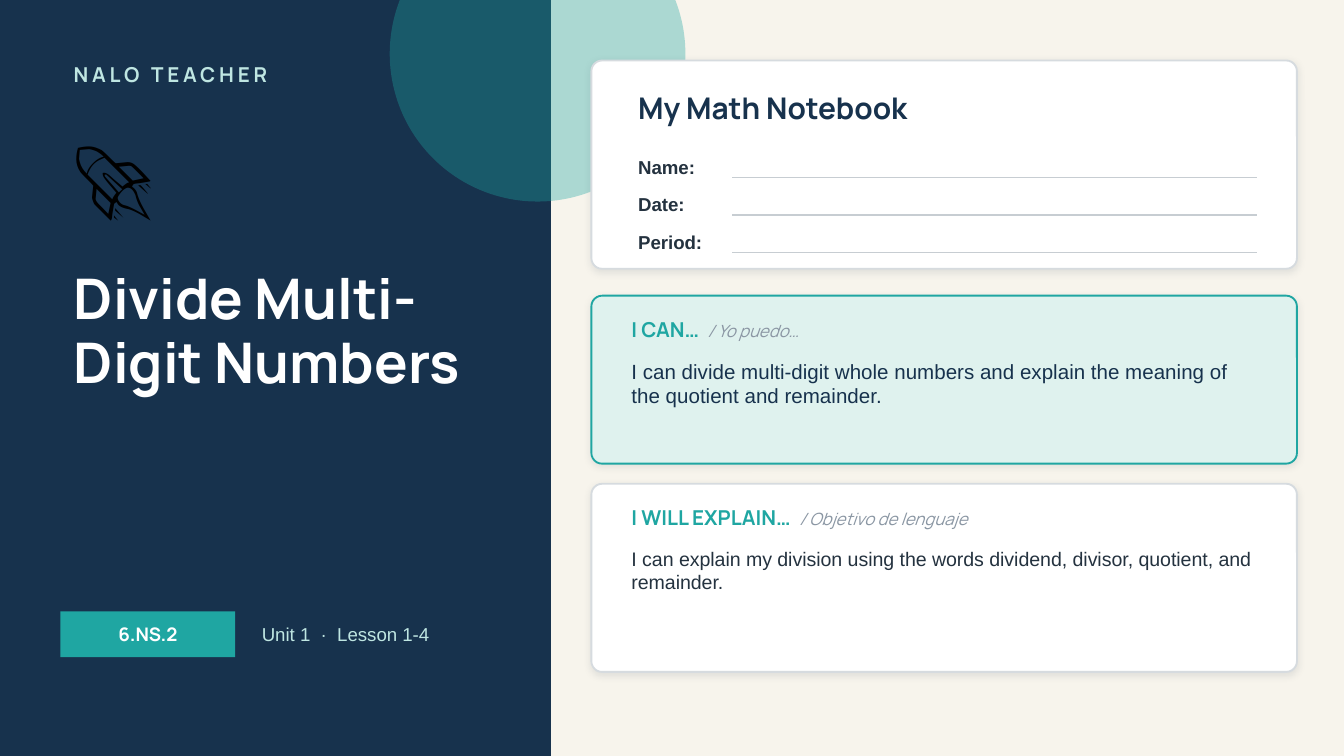
from lxml import etree
from pptx import Presentation
from pptx.dml.color import RGBColor
from pptx.enum.shapes import MSO_CONNECTOR, MSO_SHAPE
from pptx.enum.text import MSO_ANCHOR, MSO_AUTO_SIZE, PP_ALIGN
from pptx.oxml.ns import qn
from pptx.util import Inches, Pt

RECTANGLE, OVAL, ROUNDED = MSO_SHAPE.RECTANGLE, MSO_SHAPE.OVAL, MSO_SHAPE.ROUNDED_RECTANGLE
TOP, MIDDLE = MSO_ANCHOR.TOP, MSO_ANCHOR.MIDDLE
LEFT, CENTER = PP_ALIGN.LEFT, PP_ALIGN.CENTER

NAVY, TEAL, MINT = "17324D", "1FA6A2", "BFE6E2"
CREAM, WHITE, INK = "F7F4EC", "FFFFFF", "24323F"
GREY, BORDER, RULE = "8A96A3", "D6DBDF", "C7CDD2"
PALE_TEAL, SHADOW, BLACK = "DFF2EE", "1C2E42", "000000"
HEADING, BODY, SYMBOL = "Manrope", "Arial", "Calibri"

PAGE_WIDTH = 10
PAGE_HEIGHT = PAGE_WIDTH * 9 / 16
CARD_LEFT, CARD_WIDTH = 4.4, 5.25
CORNER = 0.08


def rgb(color):
    return RGBColor.from_string(color)


def style(size, color, name=BODY, **extra):
    return {"size": Pt(size), "color": color, "name": name, **extra}


def place(shape, left, top, width, height):
    shape.left, shape.top = Inches(left), Inches(top)
    shape.width, shape.height = Inches(width), Inches(height)


def write(shape, spans, anchor=MIDDLE, align=LEFT, line_spacing=None):
    """Fill a shape with one paragraph of (text, format) spans."""
    frame = shape.text_frame
    frame.word_wrap = True
    frame.auto_size = MSO_AUTO_SIZE.NONE
    frame.vertical_anchor = anchor
    para = frame.paragraphs[0]
    para.alignment = align
    para.line_spacing = line_spacing
    for text, formats in spans:
        span = para.add_run()
        span.text = text
        for key, value in formats.items():
            if key == "color":
                span.font.color.rgb = rgb(value)
            elif key in ("spc", "kern"):
                span.font._element.set(key, str(value * 100))
            else:
                setattr(span.font, key, value)


def add_text(page, bounds, spans, anchor=MIDDLE):
    box = page.shapes.add_textbox(*map(Inches, bounds))
    write(box, spans, anchor)


def add_block(page, kind, bounds, fill, opacity=None):
    block = page.shapes.add_shape(kind, *map(Inches, bounds))
    block.shadow.inherit = False
    block.fill.solid()
    block.fill.fore_color.rgb = rgb(fill)
    block.line.fill.background()
    if opacity:
        color = block._element.spPr.find(qn("a:solidFill"))[0]
        etree.SubElement(color, qn("a:alpha"), val=str(opacity * 1000))
    return block


def add_card(page, top, height, fill, border):
    """Add a rounded panel with a thin border and a soft shadow below it."""
    card = add_block(page, ROUNDED, (CARD_LEFT, top, CARD_WIDTH, height), fill)
    card.adjustments[0] = CORNER / height
    card.line.color.rgb = rgb(border)
    card.line.width = Pt(1)
    effects = card._element.spPr.find(qn("a:effectLst"))
    shadow = etree.SubElement(effects, qn("a:outerShdw"), blurRad=str(Pt(4)),
                              dist=str(Pt(1)), dir="5400000", algn="bl", rotWithShape="0")
    color = etree.SubElement(shadow, qn("a:srgbClr"), val=SHADOW)
    etree.SubElement(color, qn("a:alpha"), val="10000")


def add_writing_line(page, left, right, y):
    line = page.shapes.add_connector(
        MSO_CONNECTOR.STRAIGHT, Inches(left), Inches(y), Inches(right), Inches(y))
    line.line.color.rgb = rgb(RULE)
    line.line.width = Pt(0.75)
    etree.SubElement(line._element.spPr, qn("a:effectLst"))


def add_title(page, text):
    title = page.shapes.title
    title._element.getparent().append(title._element)  # in front of the panel
    place(title, 0.45, 1.95, 3.3, 1.7)
    write(title, [(text, style(30, WHITE, HEADING, bold=True, kern=0))], TOP,
          line_spacing=0.95)


def add_cover_panel(page):
    add_block(page, RECTANGLE, (0, 0, 4.1, PAGE_HEIGHT), NAVY)
    add_block(page, OVAL, (2.9, -0.7, 2.2, 2.2), TEAL, opacity=35)
    add_text(page, (0.45, 0.4, 3.3, 0.3),
             [("NALO TEACHER", style(11, MINT, HEADING, bold=True, spc=2))])
    add_text(page, (0.45, 0.85, 1.5, 0.9), [("🚀", style(44, BLACK, SYMBOL))])
    add_title(page, "Divide Multi-Digit Numbers")
    tag = add_block(page, RECTANGLE, (0.45, 4.55, 1.3, 0.34), TEAL)
    write(tag, [("6.NS.2", style(10, WHITE, HEADING, bold=True))], align=CENTER)
    add_text(page, (1.85, 4.55, 2.1, 0.34), [("Unit 1  ·  Lesson 1-4", style(10, MINT))])


def add_notebook_card(page):
    add_card(page, 0.45, 1.55, WHITE, BORDER)
    add_text(page, (4.65, 0.6, 4.8, 0.4),
             [("My Math Notebook", style(16, NAVY, HEADING, bold=True))])
    for row, label in enumerate(("Name:", "Date:", "Period:")):
        top = 1.12 + row * 0.28
        add_text(page, (4.65, top, 0.8, 0.24), [(label, style(10, INK, bold=True))])
        add_writing_line(page, 5.45, 9.35, top + 0.2)


def add_goal_card(page, top, height, fill, border, heading, subtitle, goal, goal_style):
    add_card(page, top, height, fill, border)
    left, width = CARD_LEFT + 0.2, CARD_WIDTH - 0.4
    add_text(page, (left, top + 0.1, width, 0.3), [
        (heading, style(11, TEAL, HEADING, bold=True)),
        (subtitle, style(9, GREY, HEADING, bold=False, italic=True)),
    ])
    add_text(page, (left, top + 0.42, width, height - 0.47), [(goal, goal_style)], TOP)


def main():
    deck = Presentation()
    deck.slide_width, deck.slide_height = Inches(PAGE_WIDTH), Inches(PAGE_HEIGHT)
    page = deck.slides.add_slide(deck.slide_layouts[5])
    page.background.fill.solid()
    page.background.fill.fore_color.rgb = rgb(CREAM)

    add_cover_panel(page)
    add_notebook_card(page)
    add_goal_card(page, 2.2, 1.25, PALE_TEAL, TEAL, "I CAN…  ", "/ Yo puedo…",
                  "I can divide multi-digit whole numbers and explain the meaning of "
                  "the quotient and remainder.", style(11, NAVY))
    add_goal_card(page, 3.6, 1.4, WHITE, BORDER, "I WILL EXPLAIN…  ", "/ Objetivo de lenguaje",
                  "I can explain my division using the words dividend, divisor, quotient, "
                  "and remainder.", style(10.5, INK))
    deck.save("out.pptx")


if __name__ == "__main__":
    main()
